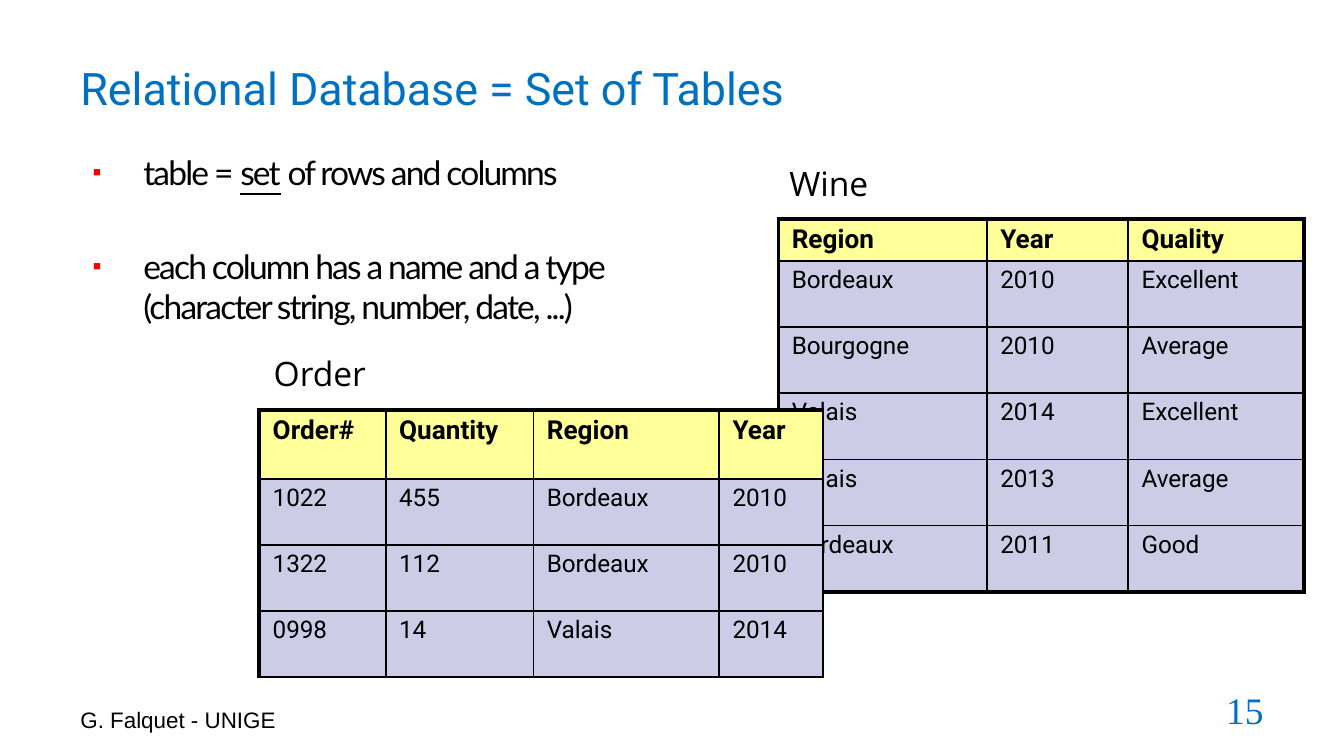
from lxml import etree
from pptx import Presentation
from pptx.dml.color import RGBColor
from pptx.enum.text import MSO_ANCHOR, PP_ALIGN
from pptx.oxml.ns import qn
from pptx.util import Cm, Pt

LEFT, CENTER, RIGHT = PP_ALIGN.LEFT, PP_ALIGN.CENTER, PP_ALIGN.RIGHT
TOP, MIDDLE, BOTTOM = MSO_ANCHOR.TOP, MSO_ANCHOR.MIDDLE, MSO_ANCHOR.BOTTOM

BLACK = RGBColor(0x00, 0x00, 0x00)
BLUE = RGBColor(0x00, 0x70, 0xC0)
RED = RGBColor(0xFF, 0x00, 0x00)
YELLOW = RGBColor(0xFF, 0xFF, 0x99)
LAVENDER = RGBColor(0xCC, 0xCC, 0xE6)

THIN, THICK = Pt(1), Pt(2.25)

# text, (left, top, width, height) in cm, font, size, colour, alignment, anchor
TITLE = ("Relational Database = Set of Tables", (1.27, 0.79, 22.43, 1.75),
         "Roboto", 24, BLUE, LEFT, MIDDLE)
FOOTER = ("G. Falquet - UNIGE", (1.27, 13, 5.92, 0.99),
          "Arial", 12, BLACK, LEFT, BOTTOM)
PAGE_NUMBER = ("15", (18.21, 13, 5.92, 0.97),
               "Times New Roman", 20, BLUE, RIGHT, BOTTOM)

# Each bullet: space before in points, then (text, underlined) runs
BULLETS_BOX = (1.5, 2.74, 11.63, 7.29)
BULLETS = [
    (3.6, [("table = ", False), ("set", True), (" of rows and columns", False)]),
    (28.8, [("each column has a name and a type "
             "(character string, number, date, ...)", False)]),
]

BODY_ROW_HEIGHT = 1.25
TABLES = [
    {
        "name": "Wine", "label_box": (14.66, 2.95, 2.01, 1.02),
        "left": 14.71, "top": 4.14, "header_height": 0.79,
        "columns": [3.94, 2.67, 3.33], "thick_sides": "LTRB",
        "rows": [
            ("Region", "Year", "Quality"),
            ("Bordeaux", "2010", "Excellent"),
            ("Bourgogne", "2010", "Average"),
            ("Valais", "2014", "Excellent"),
            ("Valais", "2013", "Average"),
            ("Bordeaux", "2011", "Good"),
        ],
    },
    {
        "name": "Order", "label_box": (4.9, 6.55, 2.29, 1.02),
        "left": 4.9, "top": 7.75, "header_height": 1.3,
        "columns": [2.39, 2.79, 3.51, 1.96], "thick_sides": "LT",
        "rows": [
            ("Order#", "Quantity", "Region", "Year"),
            ("1022", "455", "Bordeaux", "2010"),
            ("1322", "112", "Bordeaux", "2010"),
            ("0998", "14", "Valais", "2014"),
        ],
    },
]


def set_font(paragraph, name, size, color, bold=False):
    font = paragraph.font
    font.name, font.size, font.bold = name, Pt(size), bold
    font.color.rgb = color


def add_text_frame(slide, box, anchor=TOP, wrap=True):
    frame = slide.shapes.add_textbox(*map(Cm, box)).text_frame
    frame.word_wrap = wrap
    frame.vertical_anchor = anchor
    return frame


def add_text(slide, text, box, font, size, color, alignment, anchor, wrap=True):
    paragraph = add_text_frame(slide, box, anchor, wrap).paragraphs[0]
    paragraph.text = text
    paragraph.alignment = alignment
    set_font(paragraph, font, size, color)


def add_bullet_mark(paragraph):
    """Give the paragraph a hanging indent and a small red square."""
    properties = paragraph._p.get_or_add_pPr()
    indent = Cm(0.96)
    properties.set("marL", str(indent))
    properties.set("indent", str(-indent))
    bullet_color = etree.Element(qn("a:buClr"))
    etree.SubElement(bullet_color, qn("a:srgbClr"), val=str(RED))
    marks = [bullet_color,
             etree.Element(qn("a:buSzPct"), val="75000"),
             etree.Element(qn("a:buFont"), typeface="Arial"),
             etree.Element(qn("a:buChar"), char="▪")]
    defaults = properties.find(qn("a:defRPr"))
    for mark in marks:
        defaults.addprevious(mark)


def add_bullets(slide):
    frame = add_text_frame(slide, BULLETS_BOX)
    for index, (space_before, runs) in enumerate(BULLETS):
        paragraph = frame.add_paragraph() if index else frame.paragraphs[0]
        paragraph.space_before = Pt(space_before)
        set_font(paragraph, "Lato", 18, BLACK)
        add_bullet_mark(paragraph)
        for text, underlined in runs:
            run = paragraph.add_run()
            run.text = text
            run.font.underline = underlined
            run._r.get_or_add_rPr().set("spc", "-100")


def set_borders(cell, thick_sides):
    properties = cell._tc.get_or_add_tcPr()
    for side in "LRTB":
        width = THICK if side in thick_sides else THIN
        line = etree.SubElement(properties, qn(f"a:ln{side}"), w=str(width))
        fill = etree.SubElement(line, qn("a:solidFill"))
        etree.SubElement(fill, qn("a:srgbClr"), val=str(BLACK))


def outer_sides(row, column, row_count, column_count):
    """Return the letters of the cell sides on the table's outline."""
    at_edge = {"L": column == 0, "R": column == column_count - 1,
               "T": row == 0, "B": row == row_count - 1}
    return {side for side, is_outer in at_edge.items() if is_outer}


def add_table(slide, data):
    rows, columns = data["rows"], data["columns"]
    heights = [data["header_height"]] + [BODY_ROW_HEIGHT] * (len(rows) - 1)
    table = slide.shapes.add_table(
        len(rows), len(columns), Cm(data["left"]), Cm(data["top"]),
        Cm(sum(columns)), Cm(sum(heights))).table
    for column, width in zip(table.columns, columns):
        column.width = Cm(width)
    for r, (values, height) in enumerate(zip(rows, heights)):
        table.rows[r].height = Cm(height)
        is_header = r == 0
        size = 14 if is_header else 13
        for c, value in enumerate(values):
            cell = table.cell(r, c)
            cell.margin_top = cell.margin_bottom = Cm(0.1)
            outer = outer_sides(r, c, len(rows), len(columns))
            set_borders(cell, outer & set(data["thick_sides"]))
            cell.fill.solid()
            cell.fill.fore_color.rgb = YELLOW if is_header else LAVENDER
            paragraph = cell.text_frame.paragraphs[0]
            paragraph.text = value
            paragraph.space_before = Pt(0.2 * size)
            set_font(paragraph, "Roboto", size, BLACK, bold=is_header)


def main():
    presentation = Presentation()
    presentation.slide_width, presentation.slide_height = Cm(25.4), Cm(14.29)
    slide = presentation.slides.add_slide(presentation.slide_layouts[6])
    for text_item in (PAGE_NUMBER, TITLE, FOOTER):
        add_text(slide, *text_item)
    add_bullets(slide)
    for data in TABLES:
        add_table(slide, data)
        add_text(slide, data["name"], data["label_box"], "Open Sans", 18,
                 BLACK, CENTER, TOP, wrap=False)
    presentation.save("out.pptx")


if __name__ == "__main__":
    main()
